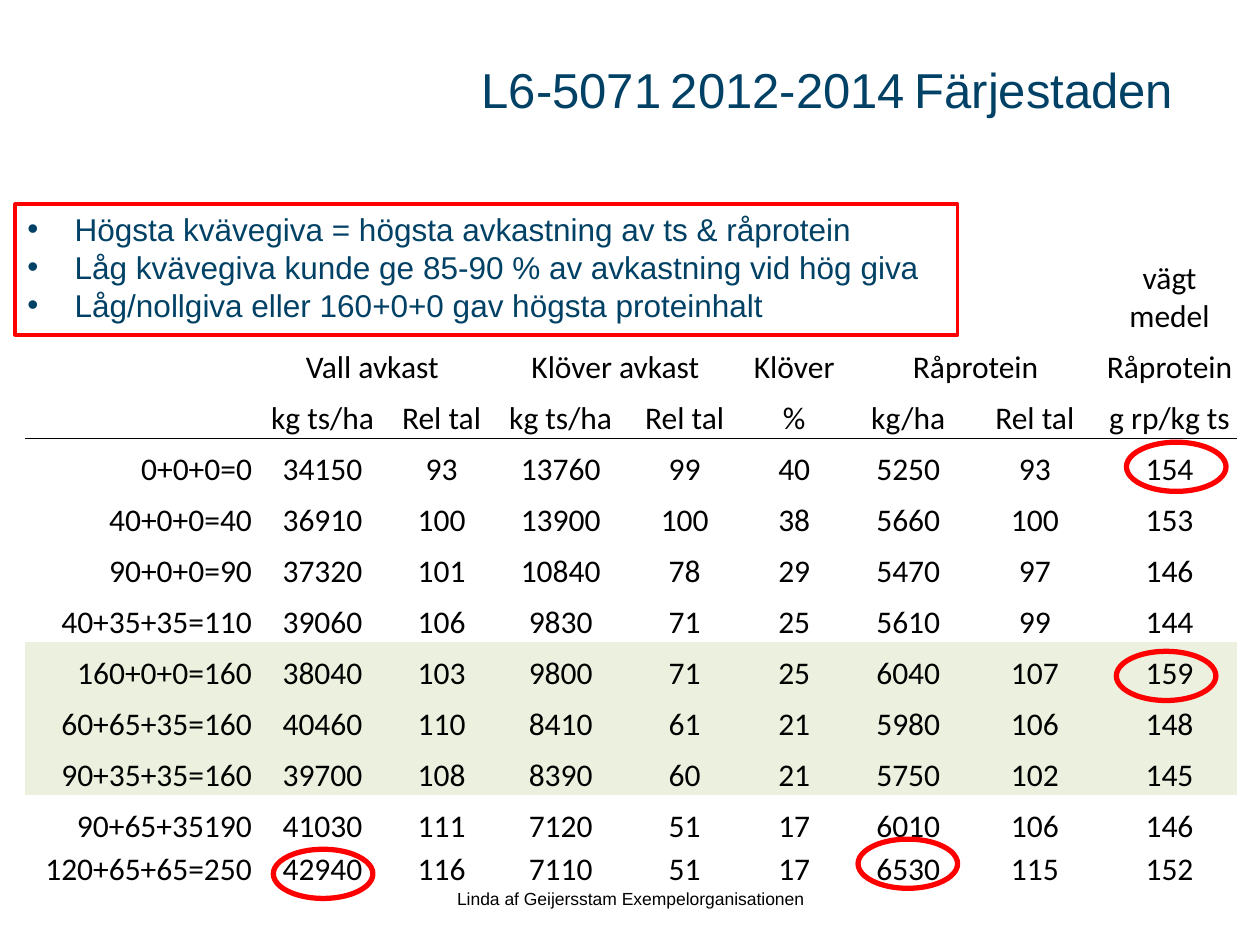
from lxml.etree import SubElement
from pptx import Presentation
from pptx.dml.color import RGBColor
from pptx.enum.shapes import MSO_SHAPE as Shape
from pptx.enum.text import MSO_ANCHOR as Anchor, MSO_AUTO_SIZE as AutoSize, PP_ALIGN as Align
from pptx.oxml import parse_xml
from pptx.oxml.ns import nsdecls, qn
from pptx.util import Pt

NAVY, RED, BLACK, GREEN = "004165", "FF0000", "000000", "EBF1DE"
NO_STYLE = "{2D5ABB26-0587-4C30-8999-92F81FD0307C}"


def color(value):
    return RGBColor.from_string(value)


def set_font(font, name, size, value):
    font.name, font.size = name, Pt(size)
    font.color.rgb = color(value)


presentation = Presentation()
presentation.slide_width, presentation.slide_height = Pt(720), Pt(540)
slide = presentation.slides.add_slide(presentation.slide_layouts[5])
shapes = slide.shapes

title = shapes.title
title.left, title.top, title.width, title.height = Pt(245.5), Pt(26.6), Pt(432), Pt(44.6)
title.text_frame.auto_size = AutoSize.NONE
title.text_frame.vertical_anchor = Anchor.BOTTOM
paragraph = title.text_frame.paragraphs[0]
paragraph.alignment = Align.RIGHT
set_font(paragraph.font, "Arial", 28, NAVY)
for text in ("L6-5071", " ", "2012-2014", " ", "Färjestaden"):
    run = paragraph.add_run()
    run.text = text
    if text == " ":
        run.font.size = Pt(20)

rows = [
    ("", "", "", "", "", "", "", "", "vägt medel"),
    ("", "Vall avkast", "", "Klöver avkast", "", "Klöver", "Råprotein", "", "Råprotein"),
    ("", "kg ts/ha", "Rel tal", "kg ts/ha", "Rel tal", "%", "kg/ha", "Rel tal", "g rp/kg ts"),
    ("0+0+0=0", 34150, 93, 13760, 99, 40, 5250, 93, 154),
    ("40+0+0=40", 36910, 100, 13900, 100, 38, 5660, 100, 153),
    ("90+0+0=90", 37320, 101, 10840, 78, 29, 5470, 97, 146),
    ("40+35+35=110", 39060, 106, 9830, 71, 25, 5610, 99, 144),
    ("160+0+0=160", 38040, 103, 9800, 71, 25, 6040, 107, 159),
    ("60+65+35=160", 40460, 110, 8410, 61, 21, 5980, 106, 148),
    ("90+35+35=160", 39700, 108, 8390, 60, 21, 5750, 102, 145),
    ("90+65+35190", 41030, 111, 7120, 51, 17, 6010, 106, 146),
    ("120+65+65=250", 42940, 116, 7110, 51, 17, 6530, 115, 152),
]
column_widths = [130.3, 79.2, 56.9, 79.2, 62.6, 62.6, 67.7, 77, 77]
row_heights = [52.3] + [29.15] * 10 + [24.5]
header_row, shaded_rows = 2, (7, 8, 9)

frame = shapes.add_table(len(rows), len(column_widths), Pt(14.4), Pt(139.7),
                         Pt(sum(column_widths)), Pt(sum(row_heights)))
table = frame.table
table.first_row = table.horz_banding = False
table._tbl.tblPr.find(qn("a:tableStyleId")).text = NO_STYLE
for column, width in zip(table.columns, column_widths):
    column.width = Pt(width)
for row, height in zip(table.rows, row_heights):
    row.height = Pt(height)
for start in (1, 3, 6):
    table.cell(1, start).merge(table.cell(1, start + 1))

for row_index, values in enumerate(rows):
    for column_index, value in enumerate(values):
        cell = table.cell(row_index, column_index)
        cell.margin_left = cell.margin_right = cell.margin_top = Pt(0.7)
        cell.margin_bottom = 0
        cell.vertical_anchor = Anchor.BOTTOM
        if row_index in shaded_rows:
            cell.fill.solid()
            cell.fill.fore_color.rgb = color(GREEN)
        else:
            cell.fill.background()
        if row_index == header_row:
            cell._tc.get_or_add_tcPr().insert(0, parse_xml(
                f'<a:lnB {nsdecls("a")} w="{Pt(0.5)}"><a:solidFill>'
                f'<a:srgbClr val="{BLACK}"/></a:solidFill></a:lnB>'))
        paragraph = cell.text_frame.paragraphs[0]
        paragraph.text = str(value)
        paragraph.alignment = Align.CENTER if column_index else Align.RIGHT
        set_font(paragraph.font, "Calibri", 18, BLACK)

for left, top in ((156.2, 485.3), (490.3, 479.5), (637.9, 372.2), (643.7, 252.7)):
    ring = shapes.add_shape(Shape.OVAL, Pt(left), Pt(top), Pt(56.9), Pt(28.1))
    ring.shadow.inherit = False
    ring.fill.background()
    ring.line.color.rgb = color(RED)
    ring.line.width = Pt(3)

summary = shapes.add_shape(Shape.RECTANGLE, Pt(8.6), Pt(116.6), Pt(538.6), Pt(74.9))
summary.shadow.inherit = False
summary.fill.background()
summary.line.color.rgb = color(RED)
summary.line.width = Pt(1.75)
summary.text_frame.word_wrap = True
summary.text_frame.vertical_anchor = Anchor.TOP
findings = [
    "Högsta kvävegiva = högsta avkastning av ts & råprotein",
    "Låg kvävegiva kunde ge 85-90 % av avkastning vid hög giva",
    "Låg/nollgiva eller 160+0+0 gav högsta proteinhalt",
]
summary.text_frame.text = "\n".join(findings)
for paragraph in summary.text_frame.paragraphs:
    properties = paragraph._p.get_or_add_pPr()
    properties.set("marL", str(Pt(27)))
    properties.set("indent", str(-Pt(27)))
    SubElement(properties, qn("a:buFont")).set("typeface", "Arial")
    SubElement(properties, qn("a:buChar")).set("char", "•")
    paragraph.alignment = Align.LEFT
    set_font(paragraph.font, "Arial", 18, NAVY)

footer = shapes.add_textbox(Pt(246.2), Pt(504), Pt(228.2), Pt(23.8))
footer.text_frame.word_wrap = True
paragraph = footer.text_frame.paragraphs[0]
paragraph.text = "Linda af Geijersstam Exempelorganisationen"
paragraph.alignment = Align.CENTER
set_font(paragraph.font, "Arial", 10, BLACK)

presentation.save("out.pptx")
